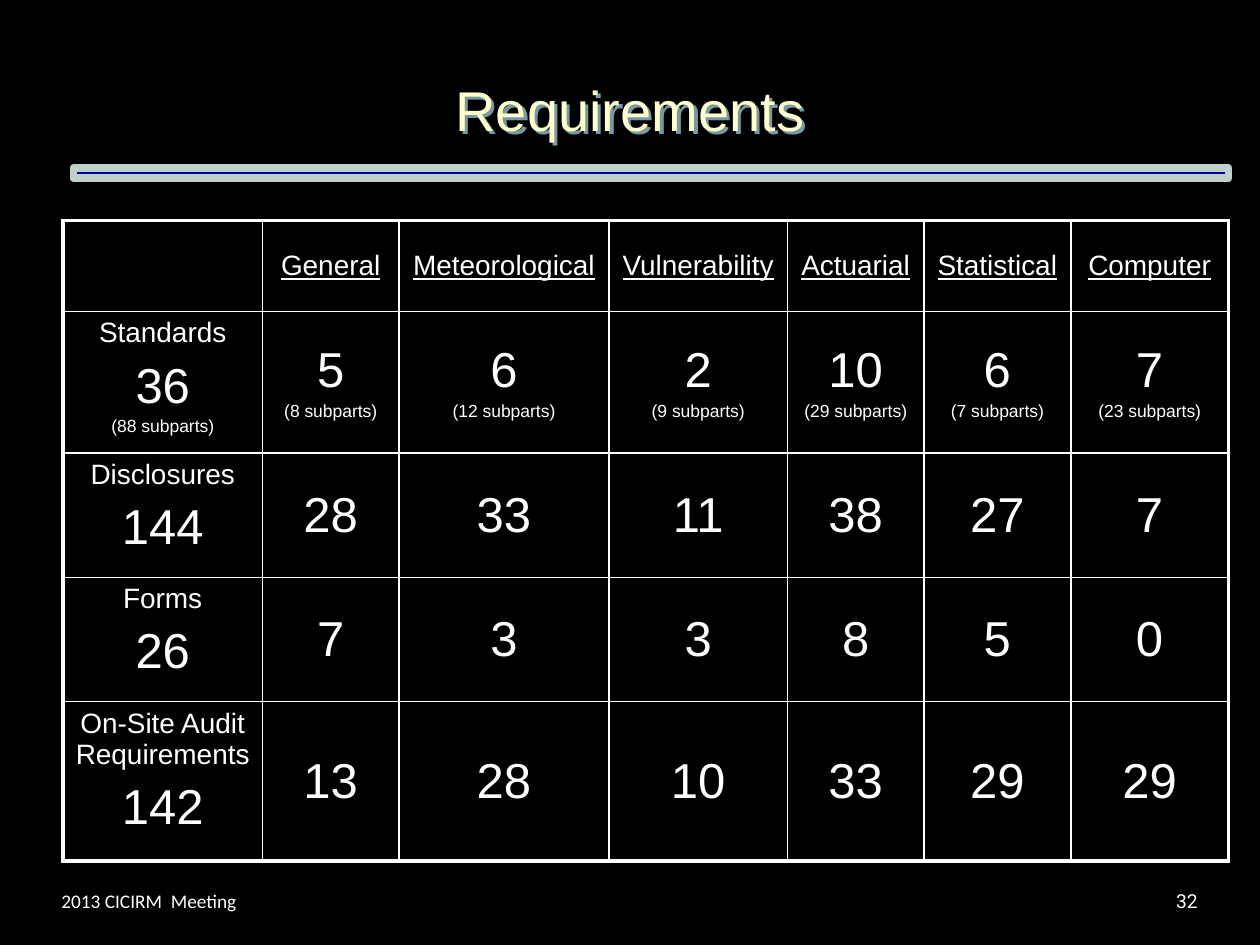
from dataclasses import dataclass

from lxml.etree import SubElement
from pptx import Presentation
from pptx.dml.color import RGBColor
from pptx.enum.shapes import MSO_SHAPE
from pptx.enum.text import MSO_ANCHOR, MSO_AUTO_SIZE, PP_ALIGN
from pptx.oxml import parse_xml
from pptx.oxml.ns import nsdecls, qn
from pptx.util import Pt


@dataclass(frozen=True)
class Theme:
    background: str = "000000"
    text: str = "FFFFFF"
    title: str = "FFFFCC"
    title_shadow: str = "7799A5"
    rule: str = "000099"
    rule_edge: str = "C1D0CA"
    font: str = "Arial"
    footer_font: str = "Calibri"
    number_font: str = "Roboto"
    title_size: int = 32
    count_size: int = 28
    label_size: int = 16
    note_size: int = 10
    footer_size: int = 11
    outer_border: float = 2.25
    inner_border: float = 1


class SlideBuilder:
    def __init__(self, deck, theme):
        self.theme = theme
        self.page = deck.slides.add_slide(deck.slide_layouts[5])
        fill = self.page.background.fill
        fill.solid()
        fill.fore_color.rgb = RGBColor.from_string(theme.background)

    def style(self, para, size, color=None, font=None, align=PP_ALIGN.CENTER):
        para.alignment = align
        para.font.size = Pt(size)
        para.font.name = font or self.theme.font
        para.font.color.rgb = RGBColor.from_string(color or self.theme.text)

    def title(self, text, left, top, width, height):
        box = self.page.shapes.title
        box.left, box.top, box.width, box.height = map(Pt, (left, top, width, height))
        frame = box.text_frame
        frame.text = text
        frame.auto_size = MSO_AUTO_SIZE.NONE
        frame.vertical_anchor = MSO_ANCHOR.MIDDLE
        self.style(frame.paragraphs[0], self.theme.title_size, self.theme.title)
        box._element.spPr.append(parse_xml(
            f'<a:effectLst {nsdecls("a")}>'
            f'<a:outerShdw dist="{Pt(2.8)}" dir="2700000" algn="ctr" rotWithShape="0">'
            f'<a:srgbClr val="{self.theme.title_shadow}"/></a:outerShdw></a:effectLst>'))

    def rule(self, left, top, width, height):
        bar = self.page.shapes.add_shape(
            MSO_SHAPE.RECTANGLE, *map(Pt, (left, top, width, height)))
        bar.shadow.inherit = False
        bar.fill.solid()
        bar.fill.fore_color.rgb = RGBColor.from_string(self.theme.rule)
        bar.line.color.rgb = RGBColor.from_string(self.theme.rule_edge)
        bar.line.width = Pt(4.5)

    def footer(self, text, left, width, font, align):
        box = self.page.shapes.add_textbox(*map(Pt, (left, 500.5, width, 28.8)))
        frame = box.text_frame
        frame.word_wrap = True
        frame.vertical_anchor = MSO_ANCHOR.MIDDLE
        frame.text = text
        self.style(frame.paragraphs[0], self.theme.footer_size, font=font, align=align)

    def table(self, rows, left, top, widths, heights):
        """Draw rows of cells, each cell being a list of (text, size) lines."""
        table = self.page.shapes.add_table(
            len(heights), len(widths),
            *map(Pt, (left, top, sum(widths), sum(heights)))).table
        table.first_row = table.horz_banding = False
        for column, width in zip(table.columns, widths):
            column.width = Pt(width)
        for row, height in zip(table.rows, heights):
            row.height = Pt(height)
        last_row, last_column = len(heights) - 1, len(widths) - 1
        for r, row in enumerate(rows):
            for c, lines in enumerate(row):
                cell = table.cell(r, c)
                is_label = c == 0 and r > 0
                cell.vertical_anchor = MSO_ANCHOR.TOP if is_label else MSO_ANCHOR.MIDDLE
                self.fill_cell(cell, lines, underline=r == 0)
                self.borders(cell, {"lnL": c == 0, "lnR": c == last_column,
                                    "lnT": r == 0, "lnB": r == last_row})

    def fill_cell(self, cell, lines, underline):
        cell.fill.background()
        frame = cell.text_frame
        for index, (text, size) in enumerate(lines):
            para = frame.add_paragraph() if index else frame.paragraphs[0]
            para.text = text
            self.style(para, size)
            para.font.underline = underline
            para.space_before = Pt(0.2 * size if index else 0)

    def borders(self, cell, outer_sides):
        """Line every side of a cell, thicker where the side is on the table's edge."""
        properties = cell._tc.get_or_add_tcPr()
        for index, (side, is_outer) in enumerate(outer_sides.items()):
            width = self.theme.outer_border if is_outer else self.theme.inner_border
            line = SubElement(properties, qn(f"a:{side}"), w=str(Pt(width)))
            fill = SubElement(line, qn("a:solidFill"))
            SubElement(fill, qn("a:srgbClr"), val=self.theme.text)
            properties.insert(index, line)


def requirement_rows(theme):
    headings = ["General", "Meteorological", "Vulnerability",
                "Actuarial", "Statistical", "Computer"]
    counts = [
        ("Standards", [36, 5, 6, 2, 10, 6, 7], [88, 8, 12, 9, 29, 7, 23]),
        ("Disclosures", [144, 28, 33, 11, 38, 27, 7], []),
        ("Forms", [26, 7, 3, 3, 8, 5, 0], []),
        ("On-Site Audit Requirements", [142, 13, 28, 10, 33, 29, 29], []),
    ]
    rows = [[[]] + [[(heading, theme.label_size)] for heading in headings]]
    for label, values, subparts in counts:
        row = [[(str(value), theme.count_size)] for value in values]
        for lines, number in zip(row, subparts):
            lines.append((f"({number} subparts)", theme.note_size))
        row[0].insert(0, (label, theme.label_size))
        rows.append(row)
    return rows


def main():
    deck = Presentation()
    deck.slide_width, deck.slide_height = Pt(720), Pt(540)
    theme = Theme()
    slide = SlideBuilder(deck, theme)
    slide.footer("32", 523.5, 168, theme.number_font, PP_ALIGN.RIGHT)
    slide.title("Requirements", 36, 21.6, 648, 81)
    slide.table(requirement_rows(theme), 36, 126,
                widths=[114, 78, 120, 102, 78, 84, 90],
                heights=[52, 81, 71, 71, 91])
    slide.rule(42, 96, 660, 6)
    slide.footer("2013 CICIRM  Meeting", 28, 228, theme.footer_font, PP_ALIGN.LEFT)
    deck.save("out.pptx")


if __name__ == "__main__":
    main()
